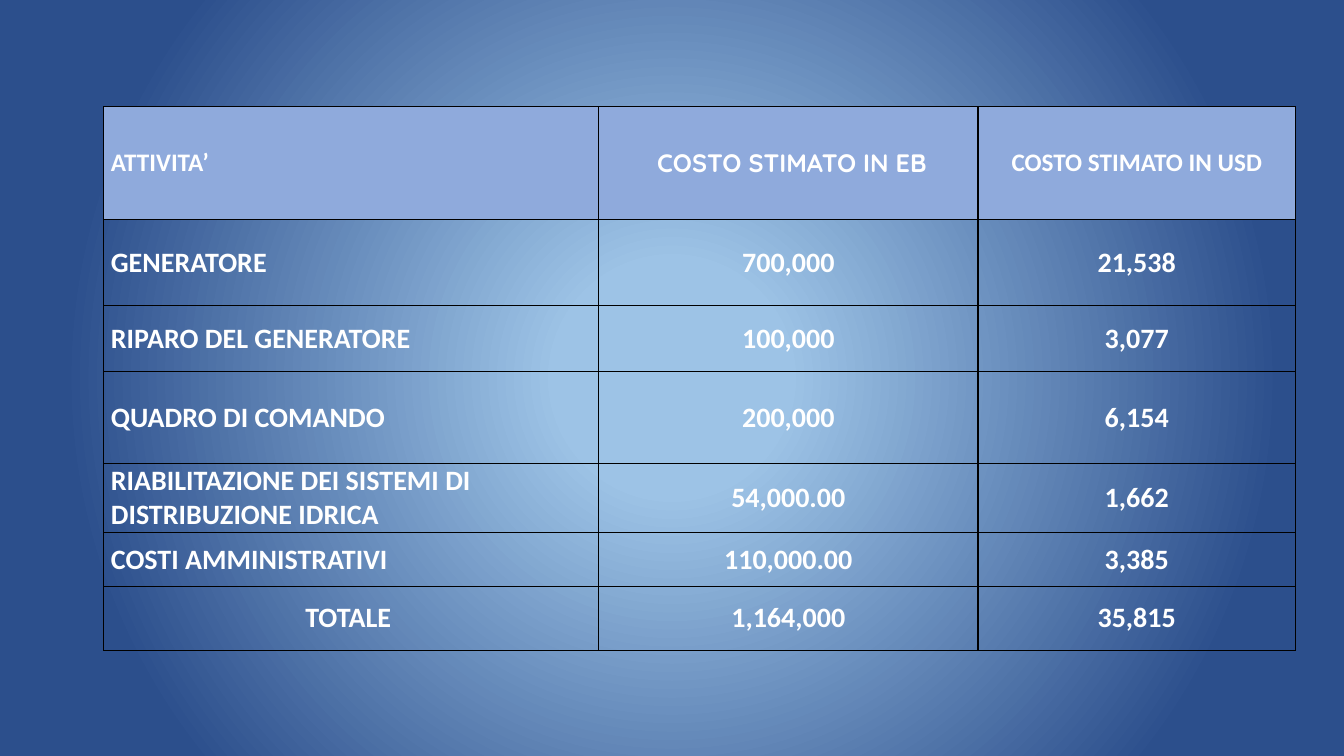
from pptx import Presentation
from pptx.dml.color import RGBColor as Rgb
from pptx.enum.text import MSO_ANCHOR as Anchor, PP_ALIGN as Align
from pptx.oxml import parse_xml
from pptx.oxml.ns import nsdecls
from pptx.util import Inches, Pt

WHITE, BLACK, HEAD = "FFFFFF", "000000", "8FAADC"
COLS = [4.91, 3.76, 3.15]
HEIGHTS = [1.12, 0.85, 0.66, 0.91, 0.54, 0.54, 0.63]
COSTS = [
    ("ATTIVITA’", " COSTO STIMATO IN EB", "COSTO STIMATO IN USD"),
    ("GENERATORE", "700,000", "21,538"),
    ("RIPARO DEL GENERATORE", "100,000", "3,077"),
    ("QUADRO DI COMANDO", "200,000", "6,154"),
    ("RIABILITAZIONE DEI SISTEMI DI DISTRIBUZIONE IDRICA", "54,000.00", "1,662"),
    ("COSTI AMMINISTRATIVI", "110,000.00", "3,385"),
    ("TOTALE ", "1,164,000", "35,815"),
]
HEAD_FONTS = ["Calibri", "Quicksand", "Calibri"]
HEAD_INDENTS = [0, -0.06, -0.14]


def color(code):
    return Rgb.from_string(code)


def write(frame, text, size=20, font="Calibri", align=Align.CENTER, indent=0):
    par = frame.paragraphs[0]
    par.alignment = align
    if indent:
        props = par._p.get_or_add_pPr()
        props.set("marL", "0")
        props.set("indent", str(Inches(indent)))
    run = par.add_run()
    run.text = text
    run.font.name, run.font.size, run.font.bold = font, Pt(size), True
    run.font.color.rgb = color(WHITE)


class Page:
    def __init__(self, deck):
        self.slide = deck.slides.add_slide(deck.slide_layouts[6])
        self.pad = Inches(0.07)
        self.line = Pt(1)

    def glow(self, stops):
        """Fill the background with a round gradient."""
        fill = self.slide.background.fill
        fill.gradient()
        for stop, (place, code) in zip(fill.gradient_stops, stops):
            stop.position = place
            stop.color.rgb = color(code)
        linear = self.slide.element.xpath(".//p:bg//a:lin")[0]
        round_path = parse_xml(
            f'<a:path {nsdecls("a")} path="circle">'
            '<a:fillToRect l="50000" t="50000" r="50000" b="50000"/></a:path>')
        linear.getparent().replace(linear, round_path)

    def border(self, cell):
        props = cell._tc.get_or_add_tcPr()
        for side in "LRTB":
            props.append(parse_xml(
                f'<a:ln{side} {nsdecls("a")} w="{self.line}"><a:solidFill>'
                f'<a:srgbClr val="{BLACK}"/></a:solidFill></a:ln{side}>'))

    def cell(self, cell, text, fill=None, **style):
        cell.margin_left = cell.margin_right = self.pad
        cell.margin_top = cell.margin_bottom = 0
        cell.vertical_anchor = Anchor.MIDDLE
        self.border(cell)
        if fill:
            cell.fill.solid()
            cell.fill.fore_color.rgb = color(fill)
        else:
            cell.fill.background()
        write(cell.text_frame, text, **style)

    def table(self, left, top, cols, heights):
        table = self.slide.shapes.add_table(
            len(heights), len(cols), Inches(left), Inches(top),
            Inches(sum(cols)), Inches(sum(heights))).table
        table.first_row = table.horz_banding = False
        for col, width in zip(table.columns, cols):
            col.width = Inches(width)
        for row, height in zip(table.rows, heights):
            row.height = Inches(height)
        return table


def main():
    deck = Presentation()
    deck.slide_width, deck.slide_height = Inches(13.33), Inches(7.5)
    page = Page(deck)
    page.glow([(0.15, "9DC3E6"), (0.79, "2C4F8C")])

    # Cost table: header, activities, total
    table = page.table(1.03, 1.06, COLS, HEIGHTS)
    last = len(COSTS) - 1
    for r, row in enumerate(COSTS):
        for c, text in enumerate(row):
            style = {}
            if c == 0 and r < last:
                style["align"] = Align.LEFT
            if r == 0:
                style.update(fill=HEAD, size=18, font=HEAD_FONTS[c],
                             indent=HEAD_INDENTS[c])
            page.cell(table.cell(r, c), text, **style)

    deck.save("out.pptx")


if __name__ == "__main__":
    main()
